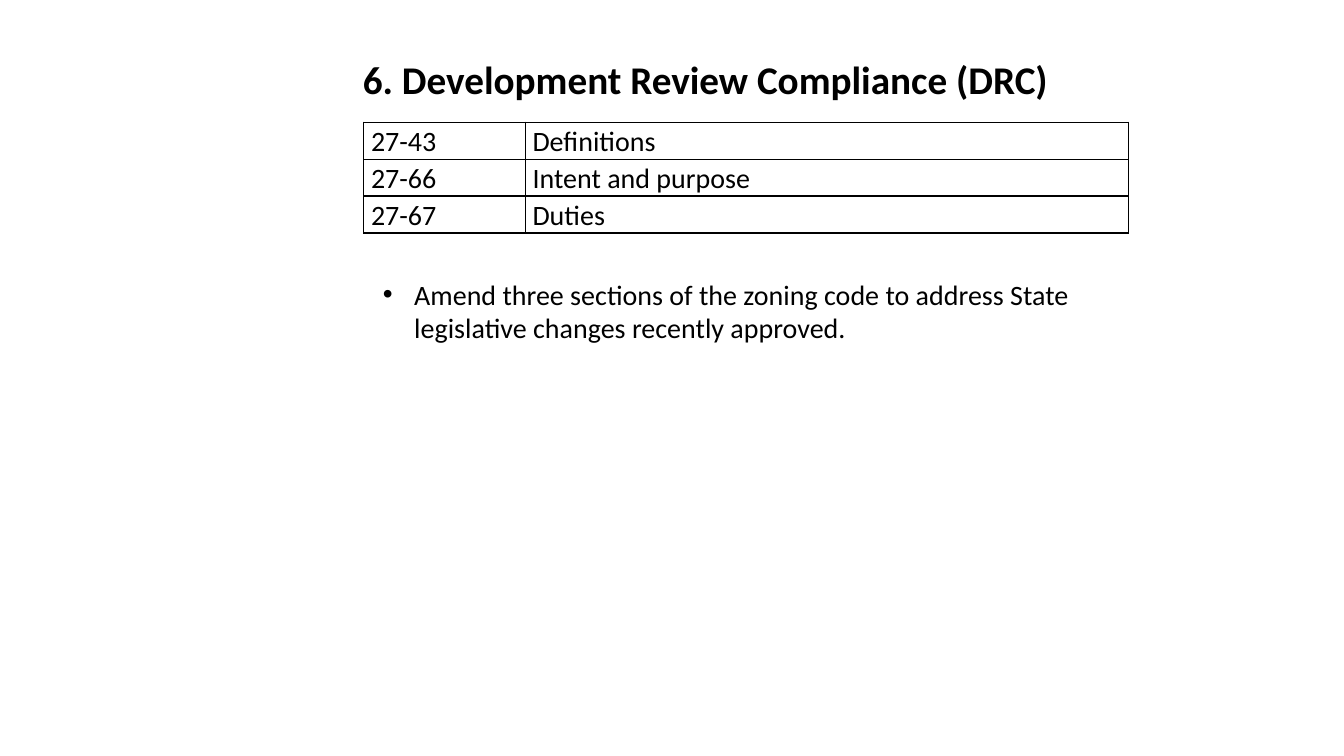
"""Build the Development Review Compliance slide with its code sections and amendment."""
import lxml.etree
import pptx
import pptx.dml.color
import pptx.enum.text
import pptx.oxml
import pptx.oxml.ns
import pptx.util

Cm = pptx.util.Cm
Pt = pptx.util.Pt
qn = pptx.oxml.ns.qn
ANCHOR = pptx.enum.text.MSO_ANCHOR

BLACK = pptx.dml.color.RGBColor(0, 0, 0)
BODY_FONT = {"name": "Calibri", "size": Pt(20), "bold": False}
TITLE_FONT = {"name": "Calibri", "size": Pt(28), "bold": True}
CELL_FORMAT = {
    "margin_left": Cm(0.18),
    "margin_right": Cm(0.18),
    "margin_top": 0,
    "margin_bottom": 0,
    "vertical_anchor": ANCHOR.MIDDLE,
}
SECTIONS = [
    ("27-43", "Definitions"),
    ("27-66", "Intent and purpose"),
    ("27-67", "Duties"),
]
COLUMN_WIDTHS = [Cm(4.07), Cm(15.19)]
ROW_HEIGHT = Cm(0.93)


def style_paragraph(paragraph, font_format, line_spacing):
    paragraph.alignment = pptx.enum.text.PP_ALIGN.LEFT
    paragraph.line_spacing = line_spacing
    for run in paragraph.runs:
        for attribute, value in font_format.items():
            setattr(run.font, attribute, value)
        run.font.color.rgb = BLACK


def add_borders(cell):
    properties = cell._tc.get_or_add_tcPr()
    for position, side in enumerate(("lnL", "lnR", "lnT", "lnB")):
        border = lxml.etree.Element(qn(f"a:{side}"), w=str(Pt(1)))
        fill = lxml.etree.SubElement(border, qn("a:solidFill"))
        lxml.etree.SubElement(fill, qn("a:srgbClr"), val=str(BLACK))
        properties.insert(position, border)


presentation = pptx.Presentation()
presentation.slide_width = Cm(33.87)
presentation.slide_height = Cm(19.05)
slide = presentation.slides.add_slide(presentation.slide_layouts[5])

heading = slide.shapes.title
heading.left, heading.top = Cm(8.89), Cm(1.02)
heading.width, heading.height = Cm(22.66), Cm(2.06)
heading.text_frame.text = "6. Development Review Compliance (DRC)"
heading.text_frame.vertical_anchor = ANCHOR.MIDDLE
style_paragraph(heading.text_frame.paragraphs[0], TITLE_FONT, 0.9)

code_sections = slide.shapes.add_table(
    len(SECTIONS), len(COLUMN_WIDTHS), Cm(9.17), Cm(3.08),
    sum(COLUMN_WIDTHS), ROW_HEIGHT * len(SECTIONS),
).table
code_sections.first_row = False
code_sections.horz_banding = False
for column, width in zip(code_sections.columns, COLUMN_WIDTHS):
    column.width = width
for row, section in zip(code_sections.rows, SECTIONS):
    row.height = ROW_HEIGHT
    for cell, wording in zip(row.cells, section):
        cell.text = wording
        for attribute, value in CELL_FORMAT.items():
            setattr(cell, attribute, value)
        cell.fill.background()
        add_borders(cell)
        style_paragraph(cell.text_frame.paragraphs[0], BODY_FONT, 1.07)

amendment = slide.shapes.add_textbox(Cm(9.4), Cm(6.86), Cm(20.04), Cm(3.68)).text_frame
amendment.word_wrap = True
amendment.text = (
    "Amend three sections of the zoning code to address State "
    "legislative changes recently approved."
)
bullet = amendment.paragraphs[0]
bullet_properties = bullet._p.get_or_add_pPr()
bullet_properties.set("marL", str(Cm(0.79)))
bullet_properties.set("indent", str(-Cm(0.79)))
lxml.etree.SubElement(bullet_properties, qn("a:buFont"), typeface="Arial")
lxml.etree.SubElement(bullet_properties, qn("a:buChar"), char="•")
style_paragraph(bullet, BODY_FONT, 1.0)

presentation.save("out.pptx")
